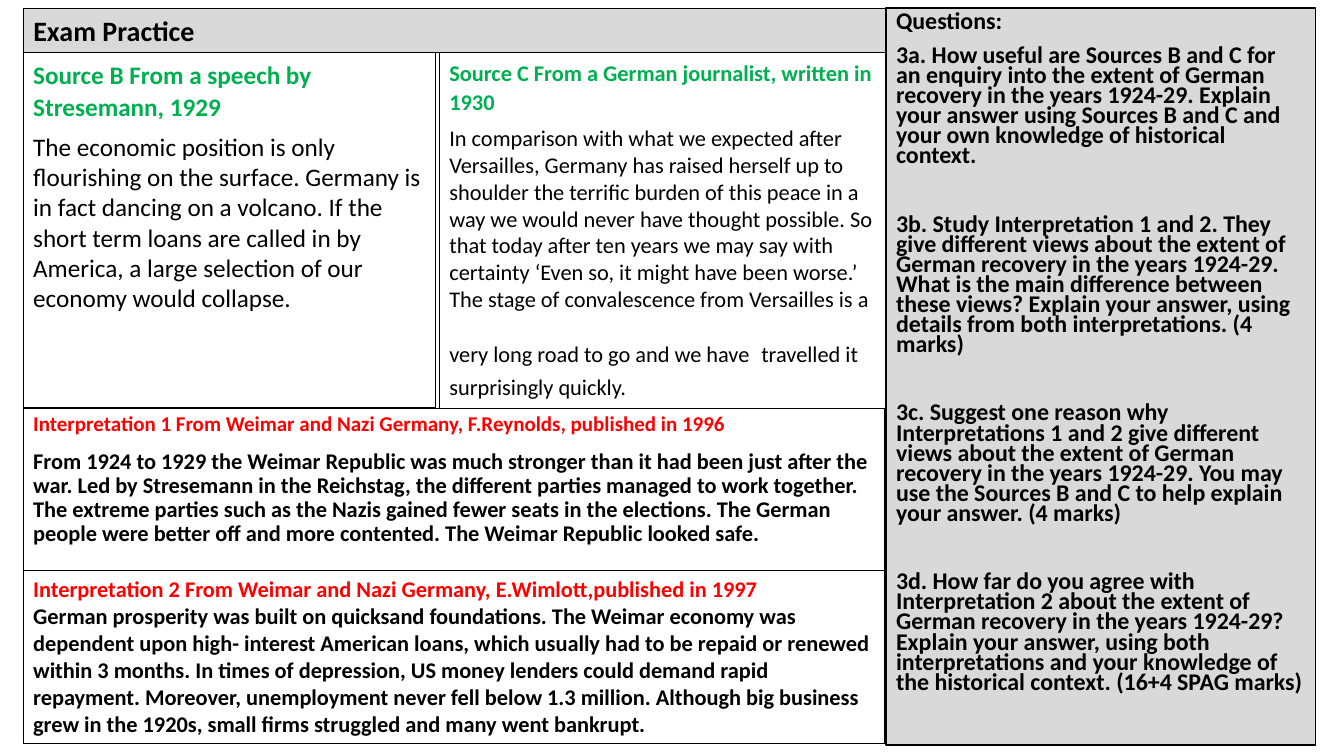
from lxml.etree import SubElement
from pptx import Presentation
from pptx.dml.color import RGBColor
from pptx.enum.shapes import MSO_SHAPE
from pptx.enum.text import MSO_ANCHOR, MSO_AUTO_SIZE, PP_ALIGN
from pptx.oxml.ns import qn
from pptx.util import Pt

COLORS = {"black": "000000", "white": "FFFFFF", "grey": "D9D9D9",
          "source": "00B050", "interpretation": "FF0000"}
LEFT, TOP, WIDTH = 16.6, 5.8, 615.6
SOURCE_TOP, INTERP_TOP = 37.4, 291.6

QUESTIONS = [
    ("Questions:", 10),
    ("3a. How useful are Sources B and C for an enquiry into the extent of German recovery in the years 1924-29. "
     "Explain your answer using Sources B and C and your own knowledge of historical context.", 10),
    ("3b. Study Interpretation 1 and 2. They give different views about the extent of German recovery in the years "
     "1924-29. What is the main difference between these views? Explain your answer, using details from both "
     "interpretations. (4 marks)", 34.3),
    ("3c. Suggest one reason why Interpretations 1 and 2 give different views about the extent of German recovery in "
     "the years 1924-29. You may use the Sources B and C to help explain your answer. (4 marks)", 34.3),
    ("3d. How far do you agree with Interpretation 2 about the extent of German recovery in the years 1924-29? "
     "Explain your answer, using both interpretations and your knowledge of the historical context. "
     "(16+4 SPAG marks)", 34.3),
]
SOURCE_B = [("The economic position is only flourishing on the surface. Germany is in fact dancing on a volcano. If the "
             "short term loans are called in by America, a large selection of our economy would collapse.", 18)]
SOURCE_C = [("In comparison with what we expected after Versailles, Germany has raised herself up to shoulder the "
             "terrific burden of this peace in a way we would never have thought possible. So that today after ten "
             "years we may say with certainty ‘Even so, it might have been worse.’ The stage of convalescence from "
             "Versailles is a very long road to go and we have", 16),
            (" ", 36),
            ("travelled it surprisingly quickly.", 16)]
INTERP_1 = [("From 1924 to 1929 the Weimar Republic was much stronger than it had been just after the war. Led by "
             "Stresemann in the Reichstag, the different parties managed to work together. The extreme parties such "
             "as the Nazis gained fewer seats in the elections. The German people were better off and more "
             "contented. The Weimar Republic looked safe.", 16)]
INTERP_2 = [("German prosperity was built on quicksand foundations. The Weimar economy was dependent upon high- interest "
             "American loans, which usually had to be repaid or renewed within 3 months. In times of depression, US "
             "money lenders could demand rapid repayment. Moreover, unemployment never fell below 1.3 million. "
             "Although big business grew in the 1920s, small firms struggled and many went bankrupt.", 16)]


class Board:
    def __init__(self, s, font="Calibri"):
        self.s = s
        self.font = font

    def color(self, name):
        return RGBColor.from_string(COLORS[name])

    def frame(self, sp, box, fill, line=1, anchor=MSO_ANCHOR.TOP):
        sp.left, sp.top, sp.width, sp.height = (Pt(v) for v in box)
        sp.fill.solid()
        sp.fill.fore_color.rgb = self.color(fill)
        sp.line.color.rgb = self.color("black")
        sp.line.width = Pt(line)
        tf = sp.text_frame
        tf.word_wrap = True
        tf.auto_size = MSO_AUTO_SIZE.NONE
        tf.vertical_anchor = anchor
        return tf

    def para(self, tf, runs, color="black", bold=True, before=0, spacing=1.0):
        p = tf.paragraphs[0]
        if p.runs:
            p = tf.add_paragraph()
        p.alignment = PP_ALIGN.LEFT
        p.space_before = Pt(before)
        p.line_spacing = spacing
        for text, size in runs:
            r = p.add_run()
            r.text = text
            r.font.name = self.font
            r.font.size = Pt(size)
            r.font.bold = bold
            r.font.color.rgb = self.color(color)
        return p

    def title(self, text, box):
        tf = self.frame(self.s.shapes.title, box, "grey", 0.75, MSO_ANCHOR.MIDDLE)
        self.para(tf, [(text, 20)])

    def questions(self, items, box):
        tf = self.frame(self.s.placeholders[1], box, "grey")
        for text, before in items:
            p = self.para(tf, [(text, 17.1)], before=before, spacing=0.7)
            pPr = p._p.get_or_add_pPr()
            pPr.set("marL", "0")
            pPr.set("indent", "0")
            SubElement(pPr, qn("a:buNone"))

    def extract(self, box, heading, size, color, runs, bold, before=(0, 0), spacing=(1.0, 1.0)):
        sp = self.s.shapes.add_shape(MSO_SHAPE.RECTANGLE, 0, 0, 0, 0)
        sp.shadow.inherit = False
        tf = self.frame(sp, box, "white")
        self.para(tf, [(heading, size)], color, True, before[0], spacing[0])
        self.para(tf, runs, "black", bold, before[1], spacing[1])


def main():
    prs = Presentation()
    prs.slide_width, prs.slide_height = Pt(960), Pt(540)
    board = Board(prs.slides.add_slide(prs.slide_layouts[1]))
    board.questions(QUESTIONS, (632.9, TOP, 306.7, 526.3))
    board.extract((LEFT, SOURCE_TOP, 294.5, 254.2), "Source B From a speech by Stresemann, 1929",
                  18, "source", SOURCE_B, False, (0, 6.7), (1.07, 1.0))
    board.extract((313.9, SOURCE_TOP, 319, 255.6), "Source C From a German journalist, written in 1930",
                  16, "source", SOURCE_C, False, (0, 6.7), (1.07, 1.0))
    board.extract((LEFT, INTERP_TOP, WIDTH, 116.6),
                  "Interpretation 1 From Weimar and Nazi Germany, F.Reynolds, published in 1996",
                  15, "interpretation", INTERP_1, True, (10, 10), (0.9, 0.9))
    board.extract((LEFT, 407.5, WIDTH, 123.8),
                  "Interpretation 2 From Weimar and Nazi Germany, E.Wimlott,published in 1997",
                  16, "interpretation", INTERP_2, True)
    board.title("Exam Practice", (LEFT, TOP, WIDTH, 31.7))
    prs.save("out.pptx")


if __name__ == "__main__":
    main()
